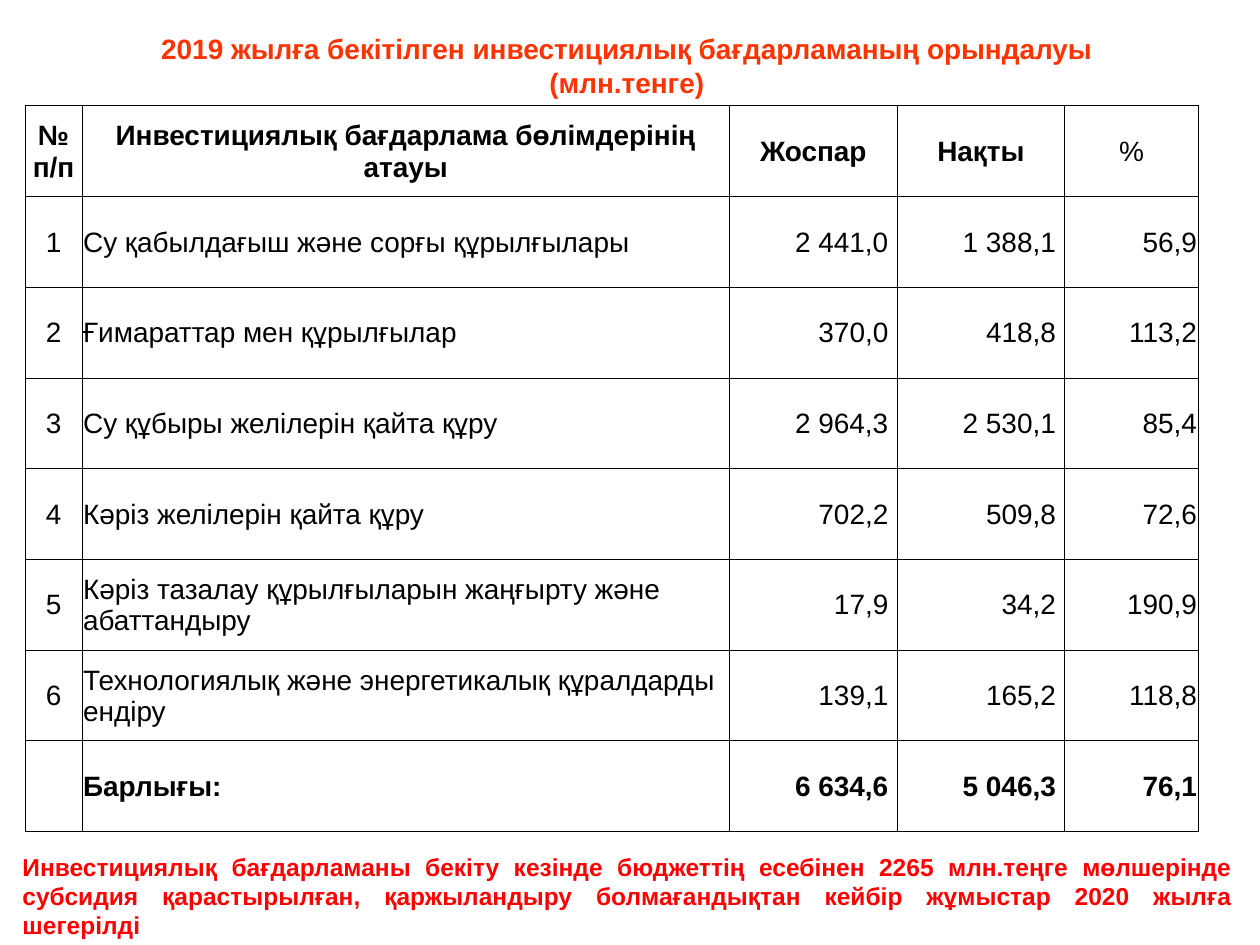
from lxml import etree
from pptx import Presentation
from pptx.dml.color import RGBColor
from pptx.enum import text
from pptx.oxml import ns
from pptx.util import Inches, Pt

TITLE = "2019 жылға бекітілген инвестициялық бағдарламаның орындалуы (млн.тенге)"
NOTE = (
    "Инвестициялық бағдарламаны бекіту кезінде бюджеттің есебінен 2265 млн.теңге "
    "мөлшерінде субсидия қарастырылған, қаржыландыру болмағандықтан кейбір "
    "жұмыстар 2020 жылға шегерілді"
)
ROWS = [
    ("№ п/п", "Инвестициялық бағдарлама бөлімдерінің атауы", "Жоспар", "Нақты", "%"),
    ("1", "Су қабылдағыш және сорғы құрылғылары", "2 441,0", "1 388,1", "56,9"),
    ("2", "Ғимараттар мен құрылғылар", "370,0", "418,8", "113,2"),
    ("3", "Су құбыры желілерін қайта құру", "2 964,3", "2 530,1", "85,4"),
    ("4", "Кәріз желілерін қайта құру", "702,2", "509,8", "72,6"),
    ("5", "Кәріз тазалау құрылғыларын жаңғырту және абаттандыру",
     "17,9", "34,2", "190,9"),
    ("6", "Технологиялық және энергетикалық құралдарды ендіру",
     "139,1", "165,2", "118,8"),
    ("", "Барлығы:", "6 634,6", "5 046,3", "76,1"),
]
COLUMN_WIDTHS = [0.45, 5.14, 1.33, 1.33, 1.06]
ROW_HEIGHT = 0.72
CENTER, LEFT, RIGHT = (
    text.PP_ALIGN.CENTER, text.PP_ALIGN.LEFT, text.PP_ALIGN.RIGHT)
COLUMN_ALIGNMENTS = [CENTER, LEFT, RIGHT, RIGHT, RIGHT]
AMOUNT_COLUMNS = (2, 3)


def color(value):
    return RGBColor.from_string(value)


def write(frame, words, size, hue, alignment, bold):
    frame.text = words
    para = frame.paragraphs[0]
    para.alignment = alignment
    for font in [para.font] + [span.font for span in para.runs]:
        font.name = "Arial"
        font.size = Pt(size)
        font.bold = bold
        font.color.rgb = color(hue)


def place_text(box, left, top, width, height, words, size, hue, alignment):
    box.left, box.top = Inches(left), Inches(top)
    box.width, box.height = Inches(width), Inches(height)
    frame = box.text_frame
    frame.word_wrap = True
    frame.auto_size = text.MSO_AUTO_SIZE.SHAPE_TO_FIT_TEXT
    frame.vertical_anchor = text.MSO_ANCHOR.TOP
    write(frame, words, size, hue, alignment, True)


def add_borders(cell, hue="000000", width=0.5):
    properties = cell._tc.get_or_add_tcPr()
    for position, side in enumerate(("lnL", "lnR", "lnT", "lnB")):
        line = etree.Element(ns.qn(f"a:{side}"), w=str(Pt(width)))
        fill = etree.SubElement(line, ns.qn("a:solidFill"))
        etree.SubElement(fill, ns.qn("a:srgbClr"), val=hue)
        properties.insert(position, line)


def fill_cell(cell, words, alignment, bold, right_margin):
    cell.fill.background()
    cell.vertical_anchor = text.MSO_ANCHOR.MIDDLE
    cell.margin_left = cell.margin_top = Inches(0.01)
    cell.margin_right = Inches(right_margin)
    cell.margin_bottom = 0
    write(cell.text_frame, words, 16, "000000", alignment, bold)
    add_borders(cell)


def add_programme_table(page):
    table = page.shapes.add_table(
        len(ROWS), len(COLUMN_WIDTHS), Inches(0.2), Inches(0.84),
        Inches(sum(COLUMN_WIDTHS)), Inches(ROW_HEIGHT * len(ROWS))).table
    table.first_row = table.horz_banding = False
    for column, width in zip(table.columns, COLUMN_WIDTHS):
        column.width = Inches(width)
    last = len(ROWS) - 1
    for r, row in enumerate(ROWS):
        table.rows[r].height = Inches(ROW_HEIGHT)
        for c, words in enumerate(row):
            is_header = r == 0
            alignment = CENTER if is_header else COLUMN_ALIGNMENTS[c]
            bold = r in (0, last) and words != "%"
            is_amount = c in AMOUNT_COLUMNS and not is_header
            fill_cell(table.cell(r, c), words, alignment, bold,
                      0.07 if is_amount else 0.01)


def main():
    deck = Presentation()
    deck.slide_width, deck.slide_height = Inches(10), Inches(7.5)
    page = deck.slides.add_slide(deck.slide_layouts.get_by_name("Title Only"))
    place_text(page.shapes.title, 1.04, 0.2, 7.87, 0.64,
               TITLE, 16, "FF3300", CENTER)
    add_programme_table(page)
    note = page.shapes.add_textbox(0, 0, 0, 0)
    place_text(note, 0.08, 6.71, 9.8, 0.57,
               NOTE, 14, "FF0000", text.PP_ALIGN.JUSTIFY)
    deck.save("out.pptx")


if __name__ == "__main__":
    main()
